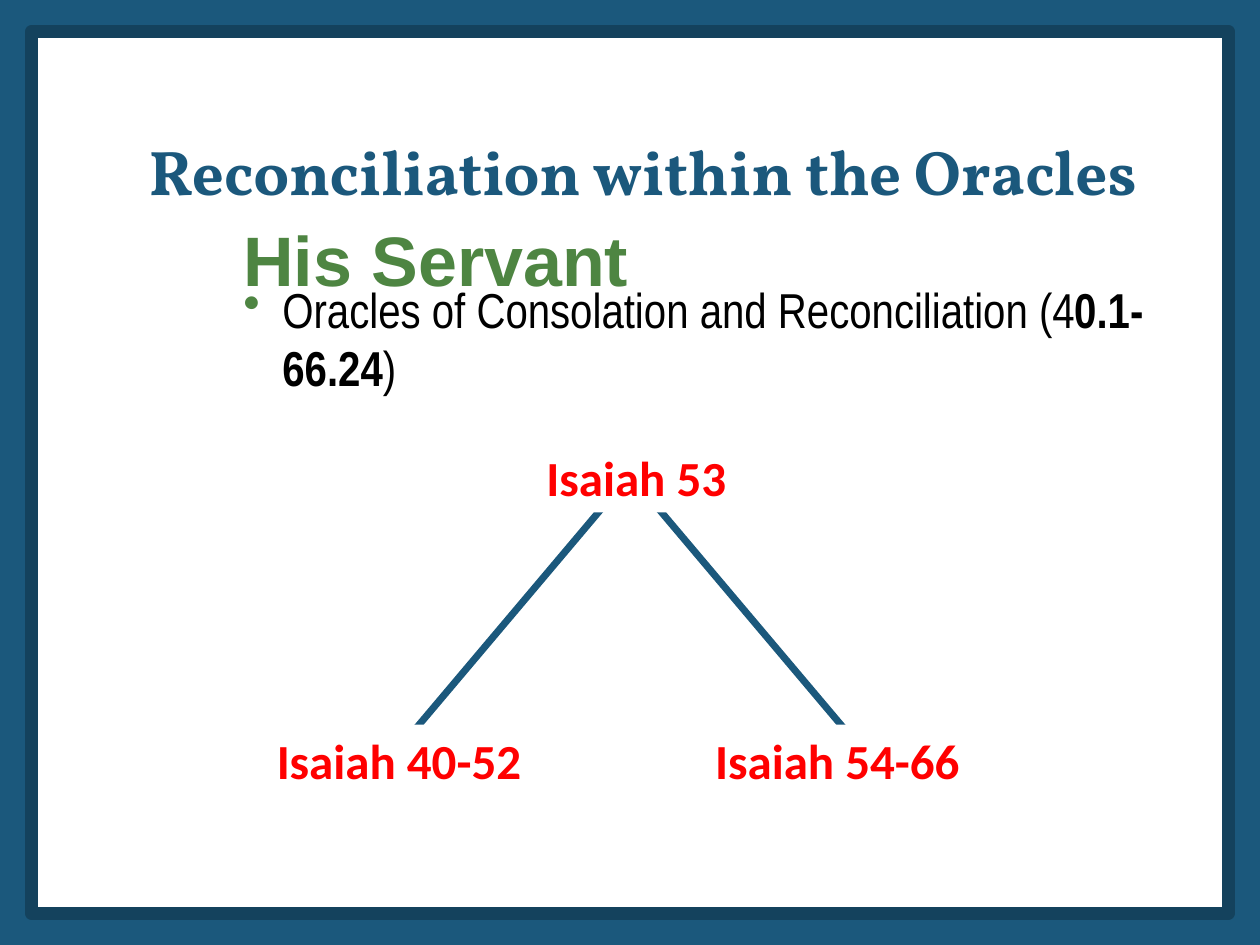
from lxml import etree
from pptx import Presentation
from pptx.dml.color import RGBColor
from pptx.enum.shapes import MSO_CONNECTOR, MSO_SHAPE
from pptx.enum.text import MSO_ANCHOR, PP_ALIGN
from pptx.oxml.ns import qn
from pptx.util import Inches, Pt

RECT = MSO_SHAPE.RECTANGLE
STRAIGHT = MSO_CONNECTOR.STRAIGHT
TOP = MSO_ANCHOR.TOP
LEFT, CENTER = PP_ALIGN.LEFT, PP_ALIGN.CENTER
COLS, ROWS = 120, 90
COLORS = {"blue": "1B587C", "frame": "14425D", "green": "4E8542",
          "red": "FF0000", "white": "FFFFFF", "black": "000000"}


def rgb(name):
    return RGBColor.from_string(COLORS[name])


class Deck:
    def __init__(self):
        self.prs = Presentation()
        self.prs.slide_width, self.prs.slide_height = Inches(10), Inches(7.5)
        self.s = self.prs.slides.add_slide(self.prs.slide_layouts[6])

    def background(self, color):
        fill = self.s.background.fill
        fill.solid()
        fill.fore_color.rgb = rgb(color)

    def grid(self, x, y):
        return (round(self.prs.slide_width * x / COLS),
                round(self.prs.slide_height * y / ROWS))

    def set_text(self, sp, runs, font, size, color, align=LEFT):
        tf = sp.text_frame
        tf.word_wrap = True
        tf.vertical_anchor = TOP
        p = tf.paragraphs[0]
        p.alignment = align
        p.font.name, p.font.size = font, Pt(size)
        p.font.color.rgb = rgb(color)
        if len(runs) == 1:
            p.font.bold = runs[0][1]
        for text, bold in runs:
            r = p.add_run()
            r.text = text
            if len(runs) > 1:
                r.font.bold = bold
        return p

    def text(self, x, y, w, h, runs, font, size, color):
        sp = self.s.shapes.add_textbox(*self.grid(x, y), *self.grid(w, h))
        return self.set_text(sp, runs, font, size, color)

    def bullet(self, p, color, indent):
        pPr = p._p.get_or_add_pPr()
        pPr.set("marL", str(Inches(indent)))
        pPr.set("indent", str(-Inches(indent)))
        clr = etree.Element(qn("a:buClr"))
        etree.SubElement(clr, qn("a:srgbClr"), val=COLORS[color])
        char = etree.Element(qn("a:buChar"), char="•")
        pPr.insert(0, clr)
        pPr.insert(1, char)

    def box(self, x, y, w, h, line=None, width=0):
        sp = self.s.shapes.add_shape(RECT, *self.grid(x, y), *self.grid(w, h))
        sp.shadow.inherit = False
        sp.fill.solid()
        sp.fill.fore_color.rgb = rgb("white")
        if line:
            sp.line.color.rgb = rgb(line)
            sp.line.width = Pt(width)
        else:
            sp.line.fill.background()
        return sp

    def node(self, x, y, w, text):
        sp = self.box(x, y, w, 6.8)
        self.set_text(sp, [(text, True)], "Calibri", 28, "red", CENTER)

    def line(self, start, end):
        c = self.s.shapes.add_connector(STRAIGHT, *self.grid(*start), *self.grid(*end))
        c.line.color.rgb = rgb("blue")
        c.line.width = Pt(4)
        etree.SubElement(c._element.spPr, qn("a:effectLst"))


def main():
    deck = Deck()
    deck.background("blue")
    deck.box(3, 3, COLS - 6, ROWS - 6, "frame", 7.25)
    deck.text(13, 12, 98, 8.5, [("Reconciliation within the Oracles", True)],
              "Vollkorn", 36, "blue")
    deck.text(22, 20, 41, 9.2, [("His Servant", True)], "Arial", 40, "green")
    p = deck.text(22, 26, 89, 12.5,
                  [("Oracles of Consolation and Reconciliation (4", False),
                   ("0.1-66.24", True), (")", False)],
                  "Arial Narrow", 28, "black")
    deck.bullet(p, "green", 0.31)
    for side in (-1, 1):
        deck.line((COLS / 2 + side * 2, 47.6), (COLS / 2 + side * 21.5, 70.7))
    for x, y, w, text in ((48.25, 42, 24.7, "Isaiah 53"),
                          (20, 69, 36, "Isaiah 40-52"),
                          (62, 69, 35.5, "Isaiah 54-66")):
        deck.node(x, y, w, text)
    deck.prs.save("out.pptx")


if __name__ == "__main__":
    main()
